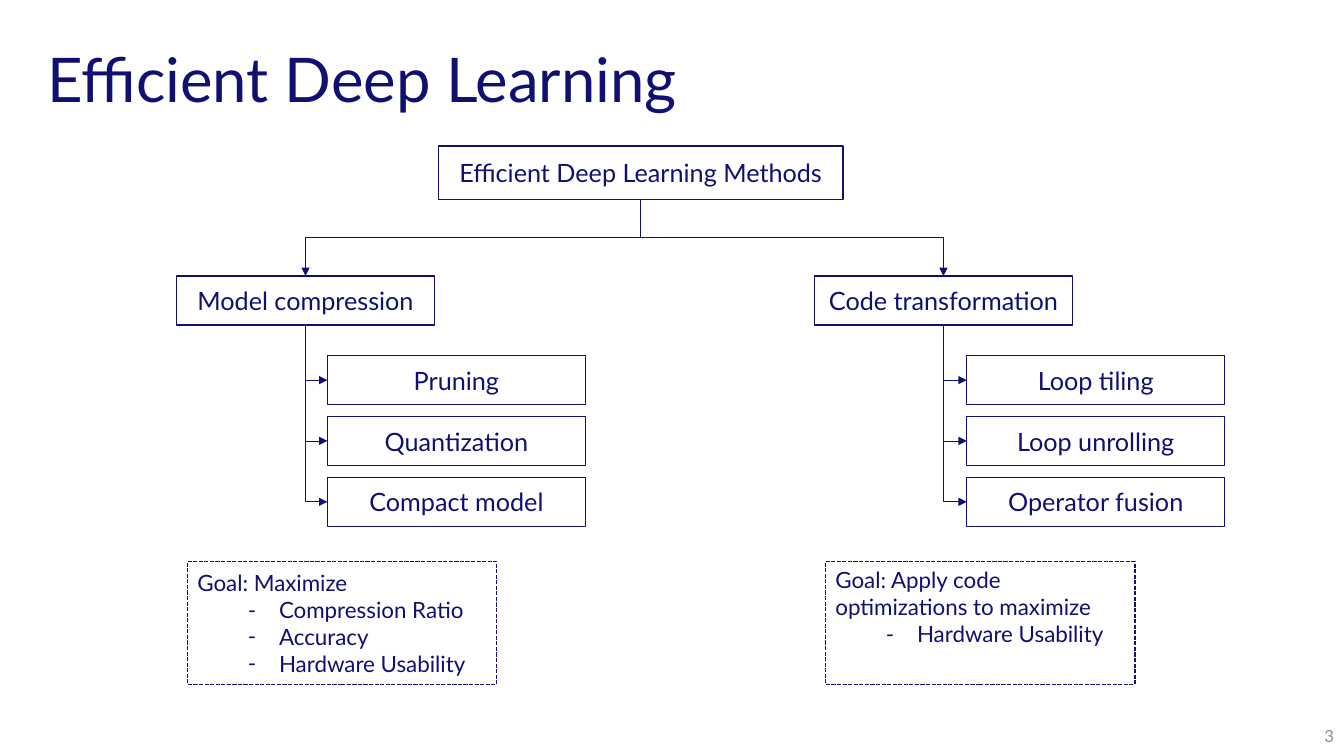
from pptx import Presentation
from pptx.dml.color import RGBColor
from pptx.enum.dml import MSO_LINE as Dash
from pptx.enum.shapes import MSO_CONNECTOR as Link, MSO_SHAPE as Shape
from pptx.enum.text import MSO_ANCHOR as Anchor, PP_ALIGN as Align
from pptx.oxml.ns import qn
from pptx.util import Inches, Pt
from lxml.etree import SubElement as Sub

NAVY = RGBColor(0x10, 0x10, 0x73)
GREY = RGBColor(0x8C, 0x8C, 0xA6)
WHITE = RGBColor(0xFF, 0xFF, 0xFF)
FONT = "Lato"
WIDE, HIGH = Inches(13.33), Inches(7.5)

# Columns and rows of a 100 by 100 grid
HALF = 19.2 / 2
SIZE = (2 * HALF, 6.5)
ROOT = (32.63, 19.3, 30.08, 7.07)
TOP = 36.5
LEAF, STEP = 47.03, 8.05

BRANCHES = [
    (13.13, 11.23, "Model compression",
     ["Pruning", "Quantization", "Compact model"],
     "Goal: Maximize",
     ["Compression Ratio", "Accuracy", "Hardware Usability"], Anchor.MIDDLE),
    (60.6, 11.33, "Code transformation",
     ["Loop tiling", "Loop unrolling", "Operator fusion"],
     "Goal: Apply code optimizations to maximize",
     ["Hardware Usability"], Anchor.TOP),
]


def col(n):
    return round(WIDE * n / 100)


def row(n):
    return round(HIGH * n / 100)


def area(x, y, w, h):
    return col(x), row(y), col(w), row(h)


def style(para, size, color=NAVY, align=Align.LEFT):
    para.font.name = FONT
    para.font.size = Pt(size)
    para.font.color.rgb = color
    para.alignment = align


def label(slide, text, place, size, color=NAVY, align=Align.LEFT):
    frame = slide.shapes.add_textbox(*area(*place)).text_frame
    frame.word_wrap = True
    frame.vertical_anchor = Anchor.MIDDLE
    para = frame.paragraphs[0]
    para.text = text
    style(para, size, color, align)
    return para


def box(slide, text, place, size=18, align=Align.CENTER):
    shape = slide.shapes.add_shape(Shape.RECTANGLE, *area(*place))
    shape.shadow.inherit = False
    shape.fill.solid()
    shape.fill.fore_color.rgb = WHITE
    shape.line.color.rgb = NAVY
    shape.line.width = Pt(1)
    frame = shape.text_frame
    frame.word_wrap = True
    frame.vertical_anchor = Anchor.MIDDLE
    frame.text = text
    style(frame.paragraphs[0], size, align=align)
    return shape


def goal(slide, text, items, place, anchor):
    shape = box(slide, text, place, 16, Align.LEFT)
    shape.line.dash_style = Dash.SQUARE_DOT
    frame = shape.text_frame
    frame.vertical_anchor = anchor
    for item in items:
        para = frame.add_paragraph()
        para.text = item
        para.level = 1
        style(para, 16)
        props = para._p.get_or_add_pPr()
        props.set("marL", str(Inches(0.81)))
        props.set("indent", str(Inches(-0.31)))
        Sub(props, qn("a:buFont"), typeface=FONT)
        Sub(props, qn("a:buChar"), char="-")


def elbow(slide, start, end, kind):
    """Bent arrow that leaves start downwards; turned a quarter to do so."""
    x1, y1, x2, y2 = col(start[0]), row(start[1]), col(end[0]), row(end[1])
    line = slide.shapes.add_connector(Link.ELBOW, x1, y1, x2, y2)
    line.line.color.rgb = NAVY
    line.line.width = Pt(0.5)
    Sub(line.line._get_or_add_ln(), qn("a:tailEnd"), type="triangle")
    props = line._element.spPr
    Sub(props, qn("a:effectLst"))
    props.find(qn("a:prstGeom")).set("prst", kind)

    # The frame before turning has its sides swapped about the same centre
    line.width, line.height = abs(y2 - y1), abs(x2 - x1)
    line.left = (x1 + x2 - line.width) // 2
    line.top = (y1 + y2 - line.height) // 2
    right = x2 > x1
    turn = props.find(qn("a:xfrm"))
    turn.set("rot", str((270 if right else 90) * 60000))
    turn.set("flipH", "1" if right else "0")


def branch(slide, x, shift, name, leaves, aim, items, anchor):
    mid = x + HALF
    box(slide, name, (x, TOP, *SIZE))
    elbow(slide, (ROOT[0] + ROOT[2] / 2, ROOT[1] + ROOT[3]), (mid, TOP),
          "bentConnector3")
    # Leaves with an arrow each
    for i, leaf in enumerate(leaves):
        y = LEAF + i * STEP
        box(slide, leaf, (x + shift, y, *SIZE))
        elbow(slide, (mid, TOP + SIZE[1]), (x + shift, y + SIZE[1] / 2),
              "bentConnector2")
    goal(slide, aim, items, (x + 0.82, 74.27, 23.02, 16.27), anchor)


def main():
    deck = Presentation()
    deck.slide_width, deck.slide_height = WIDE, HIGH
    slide = deck.slides.add_slide(deck.slide_layouts[6])

    # Title and page number
    title = label(slide, "Efficient Deep Learning",
                  (2.78, 5.33, 94.5, 11.07), 44)
    title.line_spacing = 0.9
    label(slide, "3", (94.9, 94.67, 5.1, 5.33), 12, GREY, Align.RIGHT)

    # Root and branches
    box(slide, "Efficient Deep Learning Methods", ROOT)
    for part in BRANCHES:
        branch(slide, *part)

    deck.save("out.pptx")


if __name__ == "__main__":
    main()
